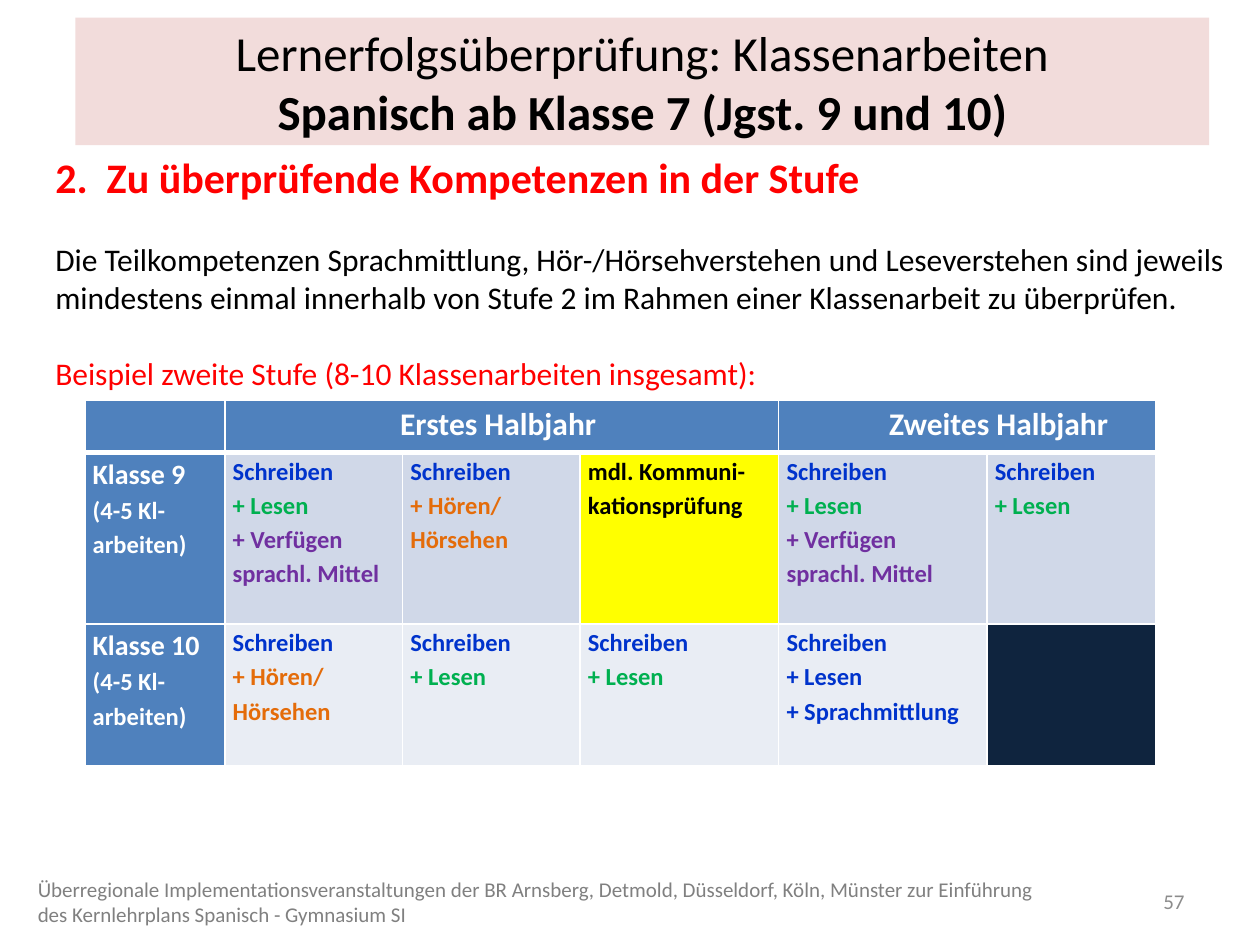
from dataclasses import dataclass

from lxml.etree import SubElement
from pptx import Presentation
from pptx.dml.color import RGBColor
from pptx.enum.text import MSO_ANCHOR, PP_ALIGN
from pptx.oxml.ns import qn
from pptx.util import Pt

BLACK = RGBColor(0x00, 0x00, 0x00)
WHITE = RGBColor(0xFF, 0xFF, 0xFF)
RED = RGBColor(0xFF, 0x00, 0x00)
FOOTER_GREY = RGBColor(0x80, 0x80, 0x80)
NUMBER_GREY = RGBColor(0x8C, 0x8C, 0x8C)
TITLE_PINK = RGBColor(0xF2, 0xDC, 0xDB)
HEADER_BLUE = RGBColor(0x4F, 0x81, 0xBD)
BAND_DARK = RGBColor(0xD0, 0xD8, 0xE8)
BAND_LIGHT = RGBColor(0xE9, 0xED, 0xF4)
YELLOW = RGBColor(0xFF, 0xFF, 0x00)
NAVY = RGBColor(0x0F, 0x24, 0x3E)
BLUE = RGBColor(0x00, 0x33, 0xCC)
GREEN = RGBColor(0x00, 0xB0, 0x50)
PURPLE = RGBColor(0x70, 0x30, 0xA0)
ORANGE = RGBColor(0xE4, 0x6C, 0x0A)

COLUMN_WIDTHS = (80, 101.5, 101.5, 113.5, 119, 96.5)
ROW_HEIGHTS = (30, 98, 81)


@dataclass(frozen=True)
class Line:
    text: str
    color: RGBColor
    size: float = 14
    bold: bool = True
    align: PP_ALIGN = PP_ALIGN.LEFT
    space_before: float = 0


@dataclass(frozen=True)
class Entry:
    fill: RGBColor
    lines: tuple[Line, ...] = ()
    span: int = 1
    indent: float = 0


WRITING = Line("Schreiben", BLUE)
READING = Line("+ Lesen", GREEN)
LISTENING = Line("+ Hören/ Hörsehen", ORANGE)
LANGUAGE = Line("+ Verfügen sprachl. Mittel", PURPLE)


def half_year(name: str, span: int, indent: float = 0) -> Entry:
    heading = Line(name, WHITE, 18, align=PP_ALIGN.CENTER)
    return Entry(HEADER_BLUE, (heading,), span, indent)


def class_label(name: str) -> Entry:
    return Entry(HEADER_BLUE, (Line(name, WHITE, 16), Line("(4-5 Kl-arbeiten)", WHITE)))


SCHEDULE = (
    (Entry(HEADER_BLUE), half_year("Erstes Halbjahr ", 3),
     half_year("Zweites Halbjahr", 2, indent=36)),
    (class_label("Klasse 9"),
     Entry(BAND_DARK, (WRITING, READING, LANGUAGE)),
     Entry(BAND_DARK, (WRITING, LISTENING)),
     Entry(YELLOW, (Line("mdl. Kommuni-kationsprüfung", BLACK),)),
     Entry(BAND_DARK, (WRITING, READING, LANGUAGE)),
     Entry(BAND_DARK, (WRITING, READING))),
    (class_label("Klasse 10"),
     Entry(BAND_LIGHT, (WRITING, LISTENING)),
     Entry(BAND_LIGHT, (WRITING, READING)),
     Entry(BAND_LIGHT, (WRITING, READING)),
     Entry(BAND_LIGHT, (WRITING, Line("+ Lesen", BLUE), Line("+ Sprachmittlung", BLUE))),
     Entry(NAVY)),
)


def write_lines(frame, lines: tuple[Line, ...], spacing: float = 1.0) -> None:
    for index, line in enumerate(lines):
        paragraph = frame.add_paragraph() if index else frame.paragraphs[0]
        paragraph.text = line.text
        paragraph.alignment = line.align
        paragraph.line_spacing = spacing
        if line.space_before:
            paragraph.space_before = Pt(line.space_before)
        for run in paragraph.runs:
            run.font.name = "Calibri"
            run.font.size = Pt(line.size)
            run.font.bold = line.bold
            run.font.color.rgb = line.color


def add_text(slide, left: float, top: float, width: float, height: float,
             lines: tuple[Line, ...], anchor: MSO_ANCHOR = MSO_ANCHOR.TOP) -> None:
    box = slide.shapes.add_textbox(Pt(left), Pt(top), Pt(width), Pt(height))
    box.text_frame.word_wrap = True
    box.text_frame.vertical_anchor = anchor
    write_lines(box.text_frame, lines)


def set_borders(cell, top: float, bottom: float) -> None:
    """Draw white borders, 1 pt at the sides; call before the cell is filled."""
    properties = cell._tc.get_or_add_tcPr()
    for side, width in (("L", 1), ("R", 1), ("T", top), ("B", bottom)):
        border = SubElement(properties, qn(f"a:ln{side}"), w=str(Pt(width)))
        solid = SubElement(border, qn("a:solidFill"))
        SubElement(solid, qn("a:srgbClr"), val=str(WHITE))


def add_title(slide) -> None:
    title = slide.shapes.title
    title.left, title.top, title.width, title.height = Pt(43), Pt(10), Pt(648), Pt(73)
    title.fill.solid()
    title.fill.fore_color.rgb = TITLE_PINK
    title.text_frame.vertical_anchor = MSO_ANCHOR.MIDDLE
    title.text_frame.text = (
        "Lernerfolgsüberprüfung: Klassenarbeiten\vSpanisch ab Klasse 7 (Jgst. 9 und 10)")
    paragraph = title.text_frame.paragraphs[0]
    paragraph.alignment = PP_ALIGN.CENTER
    for run, bold in zip(paragraph.runs, (False, True)):
        run.font.name = "Calibri"
        run.font.size = Pt(28)
        run.font.bold = bold
        run.font.color.rgb = BLACK


def add_schedule(slide) -> None:
    table = slide.shapes.add_table(
        len(ROW_HEIGHTS), len(COLUMN_WIDTHS), Pt(48.5), Pt(228.5),
        Pt(sum(COLUMN_WIDTHS)), Pt(sum(ROW_HEIGHTS))).table
    for column, width in zip(table.columns, COLUMN_WIDTHS):
        column.width = Pt(width)
    for row, height in zip(table.rows, ROW_HEIGHTS):
        row.height = Pt(height)
    for row_index, entries in enumerate(SCHEDULE):
        column_index = 0
        for entry in entries:
            last = column_index + entry.span - 1
            cell = table.cell(row_index, column_index)
            if entry.span > 1:
                cell.merge(table.cell(row_index, last))
            for covered in range(column_index, last + 1):
                part = table.cell(row_index, covered)
                set_borders(part, top=3 if row_index == 1 else 1,
                            bottom=3 if row_index == 0 else 1)
                part.fill.solid()
                part.fill.fore_color.rgb = entry.fill
            cell.margin_left = Pt(4.5 + entry.indent)
            cell.margin_right = Pt(4.5)
            cell.margin_top = cell.margin_bottom = Pt(0)
            write_lines(cell.text_frame, entry.lines, spacing=1.15)
            column_index = last + 1


def main() -> None:
    presentation = Presentation()
    presentation.slide_width, presentation.slide_height = Pt(720), Pt(540)
    slide = presentation.slides.add_slide(presentation.slide_layouts[5])
    add_title(slide)
    add_text(slide, 638, 500.5, 46, 29,
             (Line("57", NUMBER_GREY, 12, False, PP_ALIGN.RIGHT),), MSO_ANCHOR.MIDDLE)
    add_schedule(slide)
    add_text(slide, 24.5, 83, 686, 145, (
        Line("2.  Zu überprüfende Kompetenzen in der Stufe", RED, 24),
        Line("Die Teilkompetenzen Sprachmittlung, Hör-/Hörsehverstehen und Leseverstehen "
             "sind jeweils mindestens einmal innerhalb von Stufe 2 im Rahmen einer "
             "Klassenarbeit zu überprüfen.", BLACK, 18, False, space_before=22),
        Line("Beispiel zweite Stufe (8-10 Klassenarbeiten insgesamt):", RED, 18, False,
             space_before=22),
    ))
    add_text(slide, 14.5, 500.5, 595.5, 29, (
        Line("Überregionale Implementationsveranstaltungen der BR Arnsberg, Detmold, "
             "Düsseldorf, Köln, Münster zur Einführung des Kernlehrplans Spanisch - "
             "Gymnasium SI", FOOTER_GREY, 12, False),), MSO_ANCHOR.MIDDLE)
    presentation.save("out.pptx")


if __name__ == "__main__":
    main()
